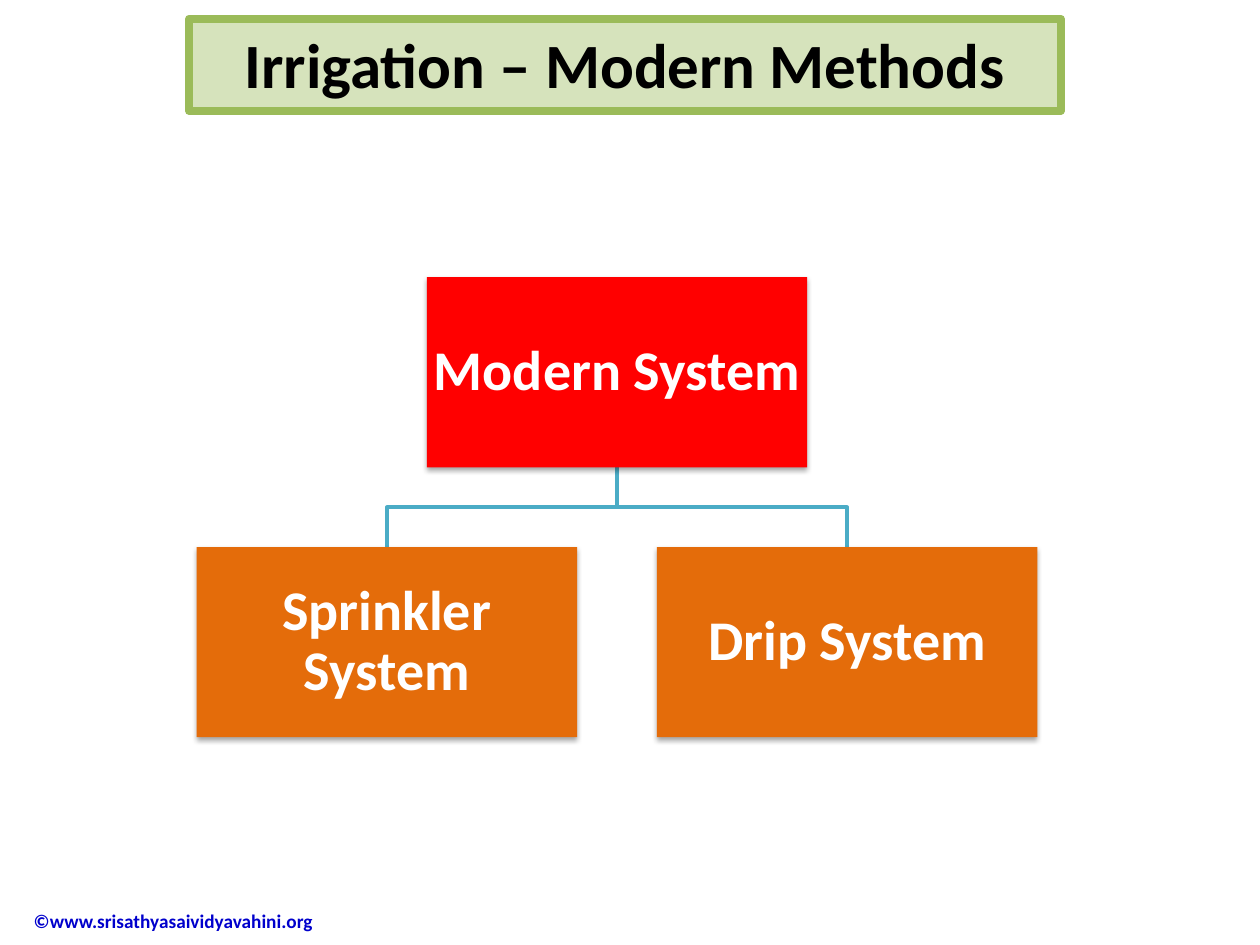
import pptx
import pptx.dml.color
import pptx.enum.shapes
import pptx.enum.text
import pptx.oxml
import pptx.oxml.ns
import pptx.util

Pt = pptx.util.Pt
RGB = pptx.dml.color.RGBColor
ALIGN = pptx.enum.text.PP_ALIGN
ANCHOR = pptx.enum.text.MSO_ANCHOR
RECT = pptx.enum.shapes.MSO_SHAPE.RECTANGLE

BLACK = RGB(0, 0, 0)
WHITE = RGB(255, 255, 255)
RED = RGB(255, 0, 0)
ORANGE = RGB(0xE4, 0x6C, 0x0A)
PALE = RGB(0xD6, 0xE3, 0xBC)
GREEN = RGB(0x9B, 0xBB, 0x59)
TEAL = RGB(0x4B, 0xAC, 0xC6)
BLUE = RGB(0, 0, 0xCC)

BOX_W, BOX_H = 217.4, 108.7
GAP = 45.6
MID = 352.6
TOP, LOW = 158.4, 312.6


def set_text(shape, text, size, color, align, anchor):
    frame = shape.text_frame
    frame.text = text
    frame.word_wrap = True
    frame.vertical_anchor = anchor
    para = frame.paragraphs[0]
    para.alignment = align
    font = para.runs[0].font
    font.name = "Calibri"
    font.size = Pt(size)
    font.bold = True
    font.color.rgb = color
    return para


def add_rect(slide, left, top, width, height, fill):
    shape = slide.shapes.add_shape(RECT, Pt(left), Pt(top), Pt(width), Pt(height))
    shape.shadow.inherit = False
    shape.fill.solid()
    shape.fill.fore_color.rgb = fill
    shape.line.fill.background()
    return shape


def add_glow(shape):
    effects = shape._element.spPr.find(pptx.oxml.ns.qn("a:effectLst"))
    effects.append(pptx.oxml.parse_xml(
        f'<a:outerShdw {pptx.oxml.ns.nsdecls("a")} blurRad="{Pt(3.1)}" '
        f'dist="{Pt(1.8)}" dir="5400000" rotWithShape="0">'
        '<a:srgbClr val="000000"><a:alpha val="35000"/></a:srgbClr></a:outerShdw>'))


def add_node(slide, mid, top, text, fill):
    shape = add_rect(slide, mid - BOX_W / 2, top, BOX_W, BOX_H, fill)
    add_glow(shape)
    frame = shape.text_frame
    frame.margin_left = frame.margin_right = Pt(1.44)
    frame.margin_top = frame.margin_bottom = Pt(1.44)
    para = set_text(shape, text, 32, WHITE, ALIGN.CENTER, ANCHOR.MIDDLE)
    para.line_spacing = 0.9


def add_link(slide, mid):
    start = TOP + BOX_H
    bend = (start + LOW) / 2
    path = slide.shapes.build_freeform(Pt(MID), Pt(start))
    points = [(MID, bend), (mid, bend), (mid, LOW)]
    path.add_line_segments([(Pt(x), Pt(y)) for x, y in points], close=False)
    link = path.convert_to_shape()
    link.shadow.inherit = False
    link.fill.background()
    link.line.color.rgb = TEAL
    link.line.width = Pt(2)


def add_title(slide):
    title = add_rect(slide, 108, 10.8, 498.2, 52.6, PALE)
    title.line.color.rgb = GREEN
    title.line.width = Pt(4.5)
    line = title._element.spPr.find(pptx.oxml.ns.qn("a:ln"))
    line.append(pptx.oxml.parse_xml(f'<a:round {pptx.oxml.ns.nsdecls("a")}/>'))
    set_text(title, "Irrigation – Modern Methods", 36, BLACK, ALIGN.CENTER, ANCHOR.TOP)


def add_credit(slide):
    box = slide.shapes.add_textbox(Pt(-23.8), Pt(511.2), Pt(217.4), Pt(29.5))
    para = set_text(box, "©www.srisathyasaividyavahini.org", 11, BLUE,
                    ALIGN.LEFT, ANCHOR.MIDDLE)
    para._p.get_or_add_pPr().set("marL", str(Pt(36)))


def main():
    deck = pptx.Presentation()
    deck.slide_width, deck.slide_height = Pt(720), Pt(540)
    slide = deck.slides.add_slide(deck.slide_layouts[6])
    add_credit(slide)
    add_title(slide)
    step = (BOX_W + GAP) / 2
    kids = [(MID - step, "Sprinkler System"), (MID + step, "Drip System")]
    for mid, _ in kids:
        add_link(slide, mid)
    add_node(slide, MID, TOP, "Modern System", RED)
    for mid, text in kids:
        add_node(slide, mid, LOW, text, ORANGE)
    deck.save("out.pptx")


if __name__ == "__main__":
    main()
